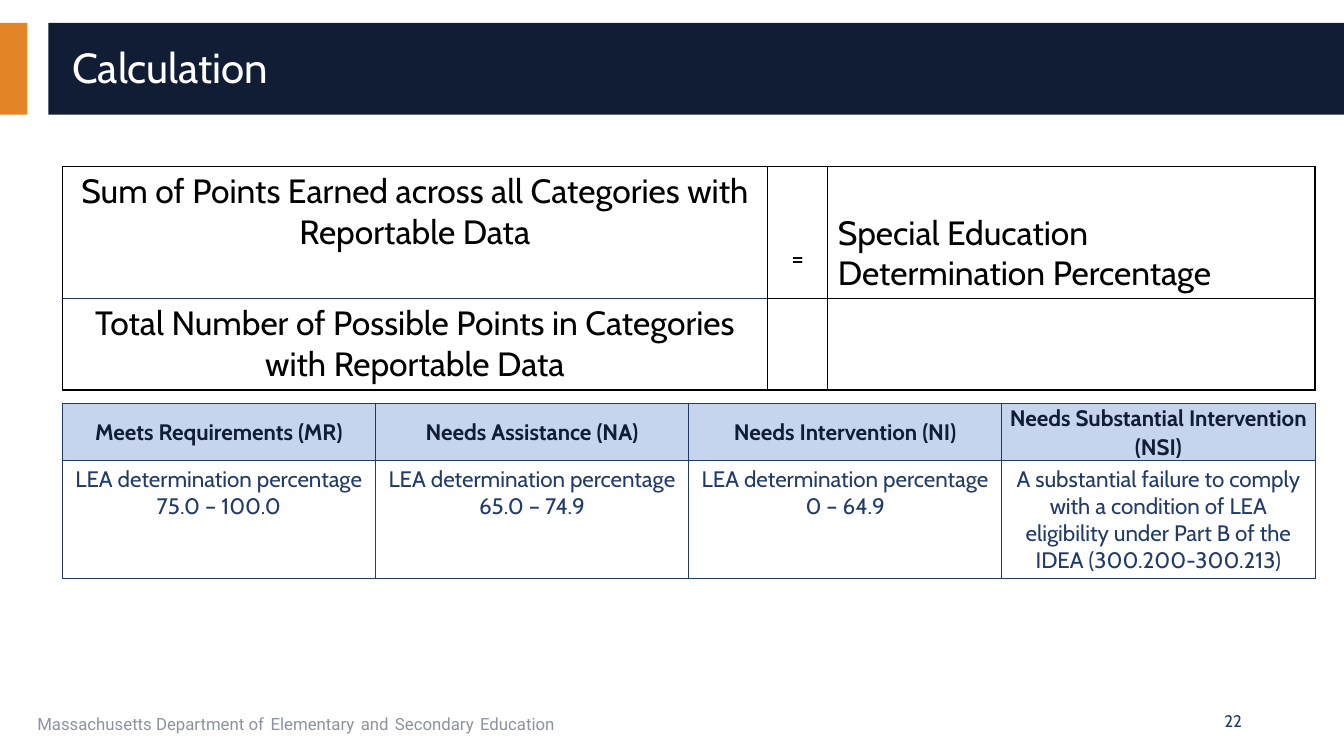
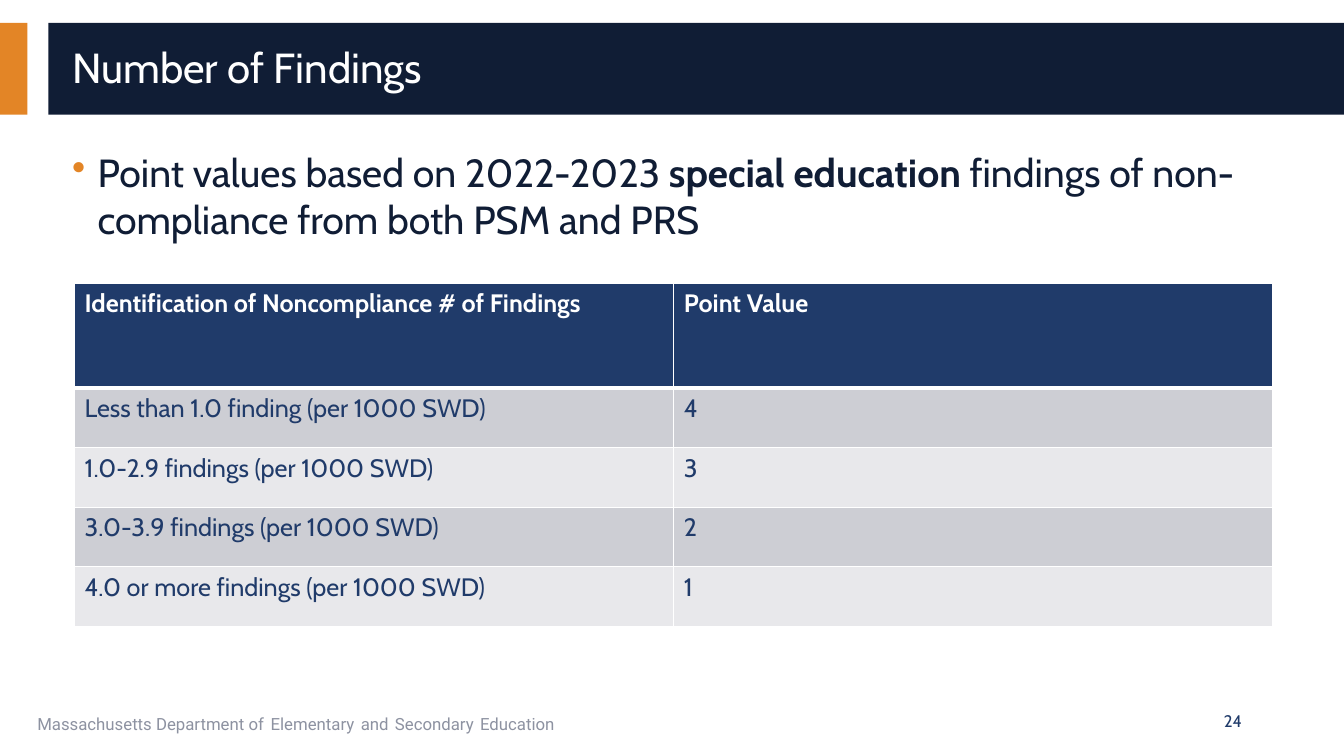
from collections import namedtuple
from dataclasses import dataclass

import lxml.etree
import pptx
import pptx.dml.color
import pptx.enum.shapes
import pptx.enum.text
import pptx.oxml.ns
import pptx.util

Cm = pptx.util.Cm
Pt = pptx.util.Pt
ALIGN = pptx.enum.text.PP_ALIGN
ANCHOR = pptx.enum.text.MSO_ANCHOR
Box = namedtuple("Box", "left top width height")


@dataclass(frozen=True)
class Theme:
    face: str = "Cabin"
    footer_face: str = "Roboto"
    orange: str = "E38526"
    navy: str = "101D35"
    blue: str = "203B6A"
    pale_blue: str = "C6D4EE"
    dark_stripe: str = "CDCED4"
    light_stripe: str = "E8E8EB"
    grey: str = "8D92A1"
    white: str = "FFFFFF"
    black: str = "000000"
    title: int = 30
    bullet: int = 28
    formula: int = 24
    body: int = 18
    cutoff: int = 16
    small: int = 12


THEME = Theme()
SLIDE = Box(0, 0, 33.87, 19.05)
FOOTER = "Massachusetts Department of|Elementary|and|Secondary|Education"
CUTOFFS = [
    ("Meets Requirements (MR)", "LEA determination percentage\n75.0 – 100.0"),
    ("Needs Assistance (NA)", "LEA determination percentage\n65.0 – 74.9"),
    ("Needs Intervention (NI)", "LEA determination percentage\n0 – 64.9"),
    ("Needs Substantial Intervention (NSI)",
     "A substantial failure to comply with a condition of LEA eligibility "
     "under Part B of the IDEA (300.200-300.213)"),
]
FINDINGS = [
    ("Identification of Noncompliance # of Findings", "Point Value"),
    ("Less than 1.0 finding (per 1000 SWD)", "4"),
    ("1.0-2.9 findings (per 1000 SWD)", "3"),
    ("3.0-3.9 findings (per 1000 SWD)", "2"),
    ("4.0 or more findings (per 1000 SWD)", "1"),
]


def rgb(color):
    return pptx.dml.color.RGBColor.from_string(color)


def lengths(box):
    return [Cm(value) for value in box]


def style(para, size, color, bold=False, align=ALIGN.LEFT, face=THEME.face):
    para.alignment = align
    para.font.name = face
    para.font.size = Pt(size)
    para.font.bold = bold
    para.font.color.rgb = rgb(color)


def add_text(page, box, anchor=ANCHOR.TOP):
    frame = page.shapes.add_textbox(*lengths(box)).text_frame
    frame.word_wrap = True
    frame.vertical_anchor = anchor
    return frame.paragraphs[0]


def add_bar(page, box, color):
    bar = page.shapes.add_shape(pptx.enum.shapes.MSO_SHAPE.RECTANGLE, *lengths(box))
    bar.shadow.inherit = False
    bar.fill.solid()
    bar.fill.fore_color.rgb = rgb(color)
    bar.line.fill.background()


def add_grid(page, box, widths, heights):
    grid = page.shapes.add_table(len(heights), len(widths), *lengths(box)).table
    grid.first_row = False
    grid.horz_banding = False
    properties = grid._tbl.tblPr
    for style_id in properties.findall(pptx.oxml.ns.qn("a:tableStyleId")):
        properties.remove(style_id)
    for column, width in zip(grid.columns, widths):
        column.width = Cm(width)
    for row, height in zip(grid.rows, heights):
        row.height = Cm(height)
    return grid


def add_borders(cell, color, **widths):
    properties = cell._tc.get_or_add_tcPr()
    for side in "LRTB":
        if side in widths:
            line = lxml.etree.SubElement(properties, pptx.oxml.ns.qn("a:ln" + side))
            line.set("w", str(Pt(widths[side])))
            fill = lxml.etree.SubElement(line, pptx.oxml.ns.qn("a:solidFill"))
            lxml.etree.SubElement(fill, pptx.oxml.ns.qn("a:srgbClr")).set("val", color)


def fill_cell(cell, color):
    cell.fill.solid()
    cell.fill.fore_color.rgb = rgb(color)


def write_cell(cell, text, size, color, **options):
    para = cell.text_frame.paragraphs[0]
    para.text = text
    style(para, size, color, **options)
    return para


def add_header(page, box, title):
    accent_width, band_left = 0.69, 1.22
    add_bar(page, Box(box.left, box.top, accent_width, box.height), THEME.orange)
    add_bar(page, Box(box.left + band_left, box.top, box.width - band_left, box.height),
            THEME.navy)
    para = add_text(page, Box(box.left + 1.57, box.top + 0.23, 31.6, 1.88), ANCHOR.MIDDLE)
    para.text = title
    para.line_spacing = 0.9
    style(para, THEME.title, THEME.white)


def add_footer(page, box, number):
    para = add_text(page, Box(box.left, box.top, 21.44, box.height))
    style(para, THEME.small, THEME.grey, face=THEME.footer_face)
    for index, words in enumerate(FOOTER.split("|")):
        if index:
            gap = para.add_run()
            gap.text = " "
            gap.font.size = Pt(THEME.body)
        para.add_run().text = words
    number_width = 7.62
    para = add_text(page, Box(box.left + box.width - number_width, box.top,
                              number_width, box.height), ANCHOR.MIDDLE)
    para.text = str(number)
    style(para, THEME.small, THEME.blue, align=ALIGN.RIGHT)


def add_page(deck, title, number):
    page = deck.slides.add_slide(deck.slide_layouts[6])
    add_header(page, Box(0, 0.58, SLIDE.width, 2.31), title)
    add_footer(page, Box(0.69, 17.65, 30.86, 1.02), number)
    return page


def add_formula(page, box):
    widths = [17.77, 1.52, box.width - 17.77 - 1.52]
    grid = add_grid(page, box, widths, [3.33, box.height - 3.33])
    numerator, equals, result = grid.rows[0].cells
    denominator = grid.cell(1, 0)
    add_borders(numerator, THEME.blue, B=1)
    add_borders(denominator, THEME.blue, T=1)
    write_cell(numerator, "Sum of Points Earned across all Categories with Reportable Data",
               THEME.formula, THEME.black, align=ALIGN.CENTER)
    write_cell(denominator, "Total Number of Possible Points in Categories with Reportable Data",
               THEME.formula, THEME.black, align=ALIGN.CENTER)
    write_cell(equals, "=", THEME.body, THEME.black, align=ALIGN.CENTER)
    write_cell(result, "Special Education\nDetermination Percentage",
               THEME.formula, THEME.black)
    equals.margin_top = Cm(1.93)
    result.margin_top = Cm(1.17)
    for cell in grid.iter_cells():
        fill_cell(cell, THEME.white)


def add_cutoffs(page, box):
    count = len(CUTOFFS)
    grid = add_grid(page, box, [box.width / count] * count, [1.45, box.height - 1.45])
    for index, (level, rule) in enumerate(CUTOFFS):
        head, detail = grid.cell(0, index), grid.cell(1, index)
        left = 0.5 if index == 0 else 1
        right = 0.5 if index == count - 1 else 1
        add_borders(head, THEME.blue, L=left, R=right, T=0.5, B=1)
        add_borders(detail, THEME.blue, L=left, R=right, T=1, B=0.5)
        para = write_cell(head, level, THEME.cutoff, THEME.navy, bold=True,
                          align=ALIGN.CENTER)
        para.line_spacing = 1.07
        head.vertical_anchor = ANCHOR.MIDDLE
        head.margin_left = head.margin_right = Cm(0.18)
        head.margin_top = head.margin_bottom = 0
        fill_cell(head, THEME.pale_blue)
        write_cell(detail, rule, THEME.cutoff, THEME.blue, align=ALIGN.CENTER)


def add_bullet(page, box, pieces):
    para = add_text(page, box)
    style(para, THEME.bullet, THEME.navy)
    properties = para._p.get_or_add_pPr()
    properties.set("marL", str(Cm(0.64)))
    properties.set("indent", str(-Cm(0.64)))
    color = lxml.etree.Element(pptx.oxml.ns.qn("a:buClr"))
    lxml.etree.SubElement(color, pptx.oxml.ns.qn("a:srgbClr")).set("val", THEME.orange)
    mark = lxml.etree.Element(pptx.oxml.ns.qn("a:buChar"))
    mark.set("char", "•")
    properties.insert(0, color)
    properties.insert(1, mark)
    for text, bold in pieces:
        span = para.add_run()
        span.text = text
        span.font.bold = bold


def add_findings(page, box):
    head_height = 2.64
    row_height = (box.height - head_height) / (len(FINDINGS) - 1)
    heights = [head_height] + [row_height] * (len(FINDINGS) - 1)
    grid = add_grid(page, box, [box.width / 2] * 2, heights)
    for row, texts in enumerate(FINDINGS):
        is_head = row == 0
        stripe = THEME.dark_stripe if row % 2 else THEME.light_stripe
        for column, text in enumerate(texts):
            cell = grid.cell(row, column)
            add_borders(cell, THEME.white, L=1, R=1, T=3 if row == 1 else 1,
                        B=3 if is_head else 1)
            write_cell(cell, text, THEME.body, THEME.white if is_head else THEME.blue,
                       bold=is_head)
            fill_cell(cell, THEME.blue if is_head else stripe)


def build_calculation(deck):
    page = add_page(deck, "Calculation", 22)
    add_formula(page, Box(1.57, 4.19, 31.57, 5.64))
    add_cutoffs(page, Box(1.57, 10.16, 31.57, 4.42))


def build_findings(deck):
    page = add_page(deck, "Number of Findings", 24)
    add_bullet(page, Box(1.57, 3.61, 31, 3), [
        ("Point values based on 2022-2023 ", False),
        ("special education", True),
        (" findings of non-compliance from both PSM and PRS", False),
    ])
    add_findings(page, Box(1.88, 7.14, 30.2, 8.64))


def main():
    deck = pptx.Presentation()
    deck.slide_width = Cm(SLIDE.width)
    deck.slide_height = Cm(SLIDE.height)
    build_calculation(deck)
    build_findings(deck)
    deck.save("out.pptx")


if __name__ == "__main__":
    main()
